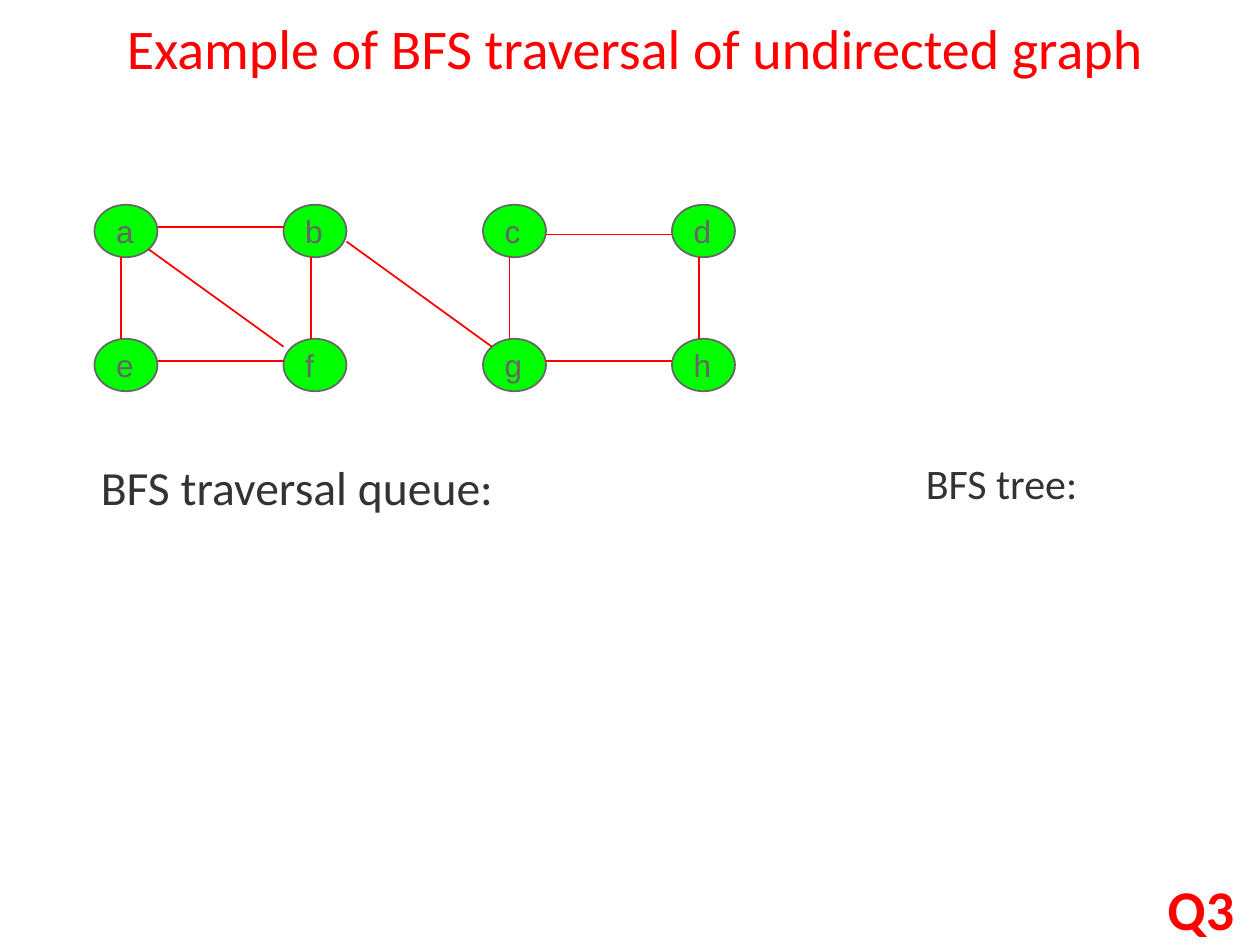
from pptx import Presentation
from pptx.dml.color import RGBColor
from pptx.enum.shapes import MSO_CONNECTOR, MSO_SHAPE
from pptx.enum.text import MSO_ANCHOR, MSO_AUTO_SIZE, PP_ALIGN
from pptx.oxml.ns import qn
from pptx.util import Pt
from lxml.etree import SubElement

NODE_WIDTH, NODE_HEIGHT = 36, 30
COLUMNS = [54, 162, 276, 384]
ROWS = [117, 193.6]
NODES = {
    name: (left, top)
    for names, top in zip(("abcd", "efgh"), ROWS)
    for name, left in zip(names, COLUMNS)
}

# Each edge: node and offset inside it at the start, then at the end
EDGES = [
    ("a", (36, 12.8), "b", (0, 12.8)),
    ("e", (36, 12.8), "f", (0, 12.8)),
    ("g", (36, 12.8), "h", (0, 12.8)),
    ("c", (36, 17), "d", (0, 17)),
    ("a", (15.2, 30), "e", (15.2, 0)),
    ("b", (15.6, 30), "f", (15.6, 0)),
    ("c", (15.2, 30), "g", (15.2, 0)),
    ("d", (15.6, 30), "h", (15.6, 0)),
    ("a", (31, 25.5), "f", (0, 4.5)),
    ("b", (36, 21), "g", (5, 4.5)),
]


def color(value):
    return RGBColor.from_string(value)


class GraphSlide:
    red, green, gray, dark = "FF0000", "00FF00", "666666", "333333"
    text_font, node_font = "Calibri", "Arial"

    def __init__(self, slide):
        self.slide = slide

    def set_text(self, shape, text, size, ink, font=text_font, bold=False):
        shape.text_frame.text = text
        paragraph = shape.text_frame.paragraphs[0]
        paragraph.space_before = Pt(0)
        run_font = paragraph.runs[0].font
        run_font.name, run_font.size, run_font.bold = font, Pt(size), bold
        run_font.color.rgb = color(ink)
        return paragraph

    def place(self, shape, left, top, width, height):
        shape.left, shape.top = Pt(left), Pt(top)
        shape.width, shape.height = Pt(width), Pt(height)

    def title(self, text, *box):
        shape = self.slide.shapes.title
        self.place(shape, *box)
        self.set_text(shape, text, 32, self.red).alignment = PP_ALIGN.CENTER
        shape.text_frame.vertical_anchor = MSO_ANCHOR.MIDDLE

    def body(self, text, *box):
        shape = self.slide.placeholders[1]
        self.place(shape, *box)
        frame = shape.text_frame
        frame.auto_size = MSO_AUTO_SIZE.NONE
        frame.margin_left = frame.margin_top = Pt(3.6)
        frame.margin_right = frame.margin_bottom = Pt(1.4)
        paragraph = self.set_text(shape, text, 27.2, self.dark)
        properties = paragraph._p.get_or_add_pPr()
        properties.set("marL", str(Pt(27)))
        properties.set("indent", str(-Pt(27)))
        SubElement(properties, qn("a:buNone"))

    def label(self, text, size, ink, *box, bold=False):
        shape = self.slide.shapes.add_textbox(*map(Pt, box))
        shape.text_frame.word_wrap = True
        self.set_text(shape, text, size, ink, bold=bold)

    def node(self, name, left, top):
        shape = self.slide.shapes.add_shape(
            MSO_SHAPE.OVAL, Pt(left), Pt(top), Pt(NODE_WIDTH), Pt(NODE_HEIGHT))
        shape.shadow.inherit = False
        shape.fill.solid()
        shape.fill.fore_color.rgb = color(self.green)
        shape.line.color.rgb = color(self.gray)
        shape.line.width = Pt(1)
        shape.text_frame.word_wrap = False
        shape.text_frame.vertical_anchor = MSO_ANCHOR.MIDDLE
        paragraph = self.set_text(shape, name, 18, self.gray, self.node_font)
        paragraph.alignment = PP_ALIGN.LEFT

    def edge(self, start, start_offset, end, end_offset):
        points = [
            Pt(base + shift)
            for node, offset in ((start, start_offset), (end, end_offset))
            for base, shift in zip(NODES[node], offset)
        ]
        line = self.slide.shapes.add_connector(MSO_CONNECTOR.STRAIGHT, *points)
        line.line.color.rgb = color(self.red)
        line.line.width = Pt(1)
        SubElement(line._element.spPr, qn("a:effectLst"))


def main():
    presentation = Presentation()
    presentation.slide_width, presentation.slide_height = Pt(720), Pt(540)
    layout = presentation.slide_layouts[1]
    graph = GraphSlide(presentation.slides.add_slide(layout))

    # Title and queue heading
    graph.title("Example of BFS traversal of undirected graph", 36, 0, 654, 54)
    graph.body("BFS traversal queue:", 54, 258, 240, 42)

    # Undirected graph
    for name, corner in NODES.items():
        graph.node(name, *corner)
    for edge in EDGES:
        graph.edge(*edge)

    # Tree heading and question number
    graph.label("BFS tree:", 24, graph.dark, 522, 258, 120, 42)
    graph.label("Q3", 32, graph.red, 660, 496, 60, 46, bold=True)

    presentation.save("out.pptx")


if __name__ == "__main__":
    main()
